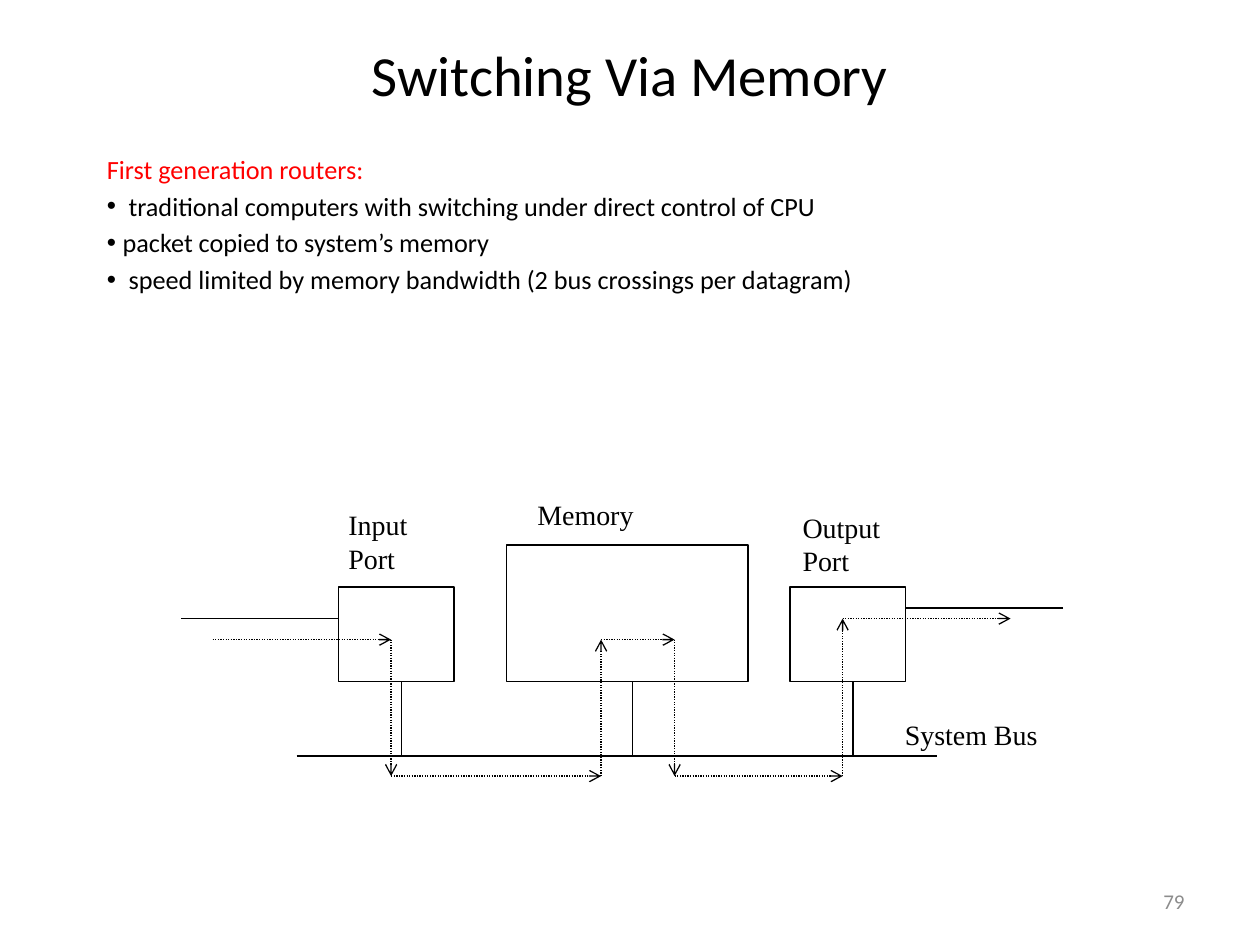
from itertools import pairwise

from pptx import Presentation
from pptx.dml.color import RGBColor
from pptx.enum import dml, shapes, text
from pptx.oxml.ns import qn
from pptx.util import Pt
from lxml import etree

COLORS = {"ink": "000000", "heading": "FF0000", "number": "8C8C8C"}
BODY_FONT = "Calibri"
LABEL_FONT = "Times New Roman"

BUS_Y = 432
BOX_BOTTOM = 389.5


def color(name):
    return RGBColor.from_string(COLORS[name])


def add_text(slide, box, lines, size, font=BODY_FONT, ink="ink", wrap=True,
             align=text.PP_ALIGN.LEFT, anchor=text.MSO_ANCHOR.TOP):
    """Add a text box with one paragraph for each line; return its paragraphs."""
    frame = slide.shapes.add_textbox(*map(Pt, box)).text_frame
    frame.word_wrap = wrap
    frame.vertical_anchor = anchor
    for index, line in enumerate(lines):
        paragraph = frame.add_paragraph() if index else frame.paragraphs[0]
        paragraph.alignment = align
        run = paragraph.add_run()
        run.text = line
        run.font.name = font
        run.font.size = Pt(size)
        run.font.color.rgb = color(ink)
    return frame.paragraphs


def set_hanging(paragraph, indent, bullet):
    paragraph.space_before = Pt(3)
    properties = paragraph._p.get_or_add_pPr()
    properties.set("marL", str(Pt(indent)))
    properties.set("indent", str(-Pt(indent)))
    if bullet:
        font = etree.SubElement(properties, qn("a:buFont"))
        font.set("typeface", "Arial")
        etree.SubElement(properties, qn("a:buChar")).set("char", bullet)


def add_box(slide, left, top, width):
    shape = slide.shapes.add_shape(
        shapes.MSO_SHAPE.RECTANGLE,
        Pt(left), Pt(top), Pt(width), Pt(BOX_BOTTOM - top))
    shape.shadow.inherit = False
    shape.fill.background()
    shape.line.color.rgb = color("ink")
    shape.line.width = Pt(0.75)


def add_line(slide, start, end, flow=False):
    """Add a solid wire, or a dotted arrow when it shows packet flow."""
    connector = slide.shapes.add_connector(
        shapes.MSO_CONNECTOR.STRAIGHT, *map(Pt, (*start, *end)))
    connector.line.color.rgb = color("ink")
    connector.line.width = Pt(0.75)
    if flow:
        connector.line.dash_style = dml.MSO_LINE.ROUND_DOT
        tail = etree.SubElement(connector.line._get_or_add_ln(), qn("a:tailEnd"))
        tail.set("type", "arrow")
    etree.SubElement(connector._element.spPr, qn("a:effectLst"))


def add_diagram(slide):
    # Ports and memory
    for left, top, width in ((193.5, 335.5, 66), (451.5, 335.5, 66), (289.5, 311.5, 138)):
        add_box(slide, left, top, width)

    # System bus, its taps and the outside links
    add_line(slide, (169.5, BUS_Y), (535.5, BUS_Y))
    for x in (229.5, 361.5, 487.5):
        add_line(slide, (x, BOX_BOTTOM), (x, BUS_Y))
    add_line(slide, (193.5, 353.5), (103.5, 353.5))
    add_line(slide, (607.5, 347.5), (517.5, 347.5))

    # Packet path: in, across the bus to memory, and across it again
    upper, lower, exit_y = 365.5, 443.5, 353.5
    route = [(121.5, upper), (223.5, upper), (223.5, lower), (343.5, lower),
             (343.5, upper), (385.5, upper), (385.5, lower), (481.5, lower),
             (481.5, exit_y), (577.5, exit_y)]
    for start, end in pairwise(route):
        add_line(slide, start, end, flow=True)

    # Labels
    for box, lines in (
        ((192, 286.5, 48, 46), ["Input", "Port"]),
        ((451.5, 288, 59, 46), ["Output", "Port"]),
        ((300, 281, 70, 26.5), ["Memory"]),
        ((510, 406.5, 91, 26.5), ["System Bus"]),
    ):
        add_text(slide, box, lines, 16, LABEL_FONT, wrap=False)


def main():
    presentation = Presentation()
    presentation.slide_width, presentation.slide_height = Pt(720), Pt(540)
    slide = presentation.slides.add_slide(presentation.slide_layouts[6])

    # Slide number and title
    add_text(slide, (516, 500.5, 168, 28.5), ["79"], 12, ink="number",
             align=text.PP_ALIGN.RIGHT, anchor=text.MSO_ANCHOR.MIDDLE)
    add_text(slide, (54, 18, 612, 48), ["Switching Via Memory"], 32.4,
             align=text.PP_ALIGN.CENTER, anchor=text.MSO_ANCHOR.MIDDLE)

    # Heading and bullet points
    paragraphs = add_text(slide, (54, 84, 618, 84), [
        "First generation routers:",
        " traditional computers with switching under direct control of CPU",
        "packet copied to system’s memory",
        " speed limited by memory bandwidth (2 bus crossings per datagram)",
    ], 15)
    paragraphs[0].runs[0].font.color.rgb = color("heading")
    for index, paragraph in enumerate(paragraphs):
        set_hanging(paragraph, 9, "•" if index else None)

    add_diagram(slide)
    presentation.save("out.pptx")


if __name__ == "__main__":
    main()
